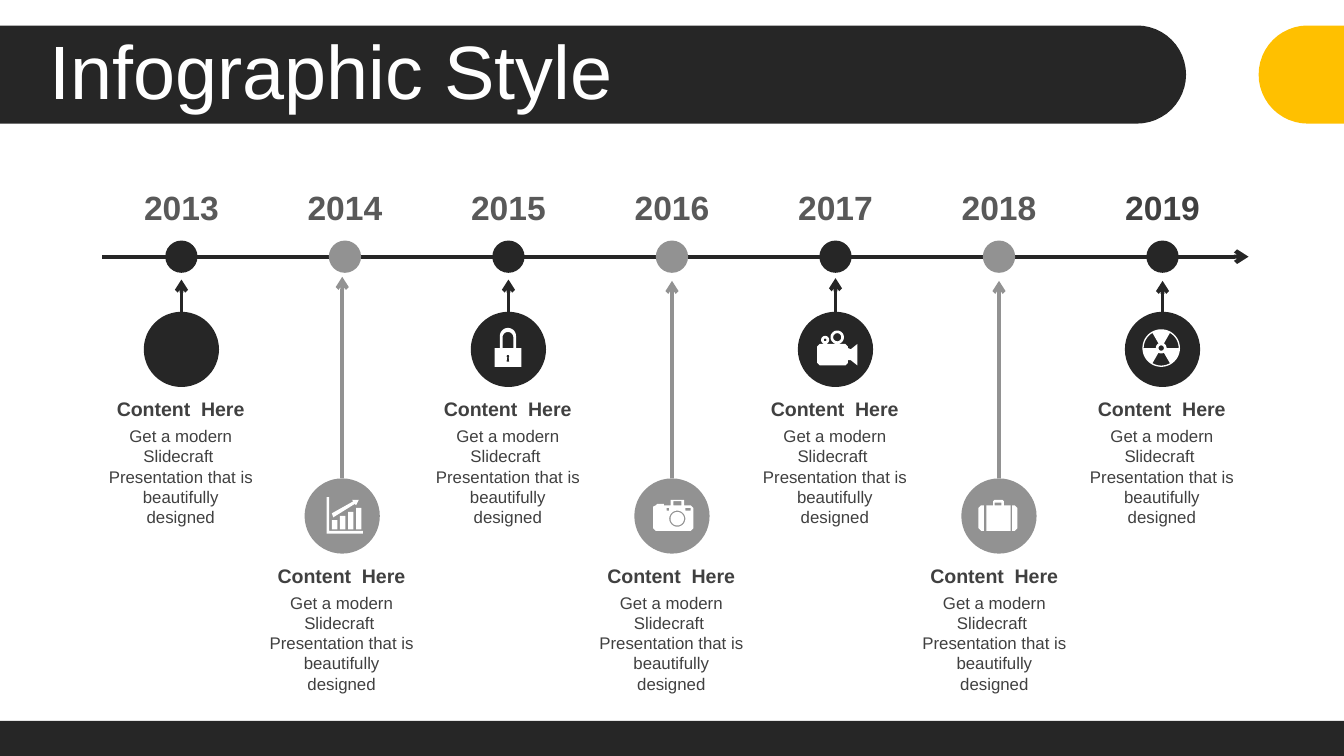
import math
from lxml import etree
from pptx import Presentation
from pptx import util as u
from pptx.dml.color import RGBColor
from pptx.enum import shapes, text
from pptx.oxml.ns import qn

DARK = RGBColor(0x26, 0x26, 0x26)
GRAY = RGBColor(0x92, 0x92, 0x92)
AMBER = RGBColor(0xFF, 0xC0, 0x00)
WHITE = RGBColor(0xFF, 0xFF, 0xFF)
INK = RGBColor(0x40, 0x40, 0x40)
YEAR = RGBColor(0x59, 0x59, 0x59)

WIDTH, HEIGHT = 10, 10 * 9 / 16
FOOTER_H = 0.26
BAND_TOP, BAND_BOTTOM = 0.19, 0.92
FIRST_X, LAST_X, AXIS_Y = 1.35, 8.65, 1.91
NODE_R, BADGE_R = 0.12, 0.28
HEADING = "Content  Here"
BODY = "Get a modern Slidecraft  Presentation that is beautifully designed"

# year, badge shift, text shift, arrow tip
MILESTONES = [
    ("2013", 0, 0, 2.08),
    ("2014", -0.02, -0.02, 2.06),
    ("2015", 0, 0, 2.08),
    ("2016", 0, 0, 2.09),
    ("2017", 0, 0, 2.07),
    ("2018", 0, -0.03, 2.09),
    ("2019", 0, 0, 2.09),
]
STEP = (LAST_X - FIRST_X) / (len(MILESTONES) - 1)


def arc(cx, cy, r, start, end, n=24):
    angles = [math.radians(start + (end - start) * i / n) for i in range(n + 1)]
    return [(cx + r * math.cos(a), cy + r * math.sin(a)) for a in angles]


def ring(cx, cy, r):
    return arc(cx, cy, r, 0, 360, 48)


def box(left, top, right, bottom):
    return [(left, top), (right, top), (right, bottom), (left, bottom)]


def paint(sp, color):
    sp.shadow.inherit = False
    sp.fill.solid()
    sp.fill.fore_color.rgb = color
    sp.line.fill.background()
    return sp


def add_outline(s, contours, color):
    contours = [[(u.Inches(x), u.Inches(y)) for x, y in c] for c in contours]
    fb = s.shapes.build_freeform(*contours[0][0], scale=1.0)
    for i, points in enumerate(contours):
        if i:
            fb.move_to(*points[0])
        fb.add_line_segments(points[1:], close=True)
    return paint(fb.convert_to_shape(), color)


def add_preset(s, kind, left, top, width, height, color):
    sp = s.shapes.add_shape(kind, u.Inches(left), u.Inches(top),
                            u.Inches(width), u.Inches(height))
    return paint(sp, color)


def add_circle(s, cx, cy, r, color):
    return add_preset(s, shapes.MSO_SHAPE.OVAL, cx - r, cy - r, 2 * r, 2 * r, color)


def add_arrow(s, x1, y1, x2, y2, color, width, start=None):
    ln = s.shapes.add_connector(shapes.MSO_CONNECTOR.STRAIGHT, u.Inches(x1),
                                u.Inches(y1), u.Inches(x2), u.Inches(y2))
    if start is not None:
        ln.begin_connect(start, 0)
    ln.line.color.rgb = color
    ln.line.width = u.Pt(width)
    spPr = ln._element.spPr
    etree.SubElement(spPr.find(qn("a:ln")), qn("a:tailEnd"), type="arrow")
    etree.SubElement(spPr, qn("a:effectLst"))


def add_text(s, left, top, width, height, words, size, color, bold=False,
             align=text.PP_ALIGN.CENTER, anchor=text.MSO_ANCHOR.MIDDLE):
    sp = s.shapes.add_textbox(u.Inches(left), u.Inches(top),
                              u.Inches(width), u.Inches(height))
    tf = sp.text_frame
    tf.word_wrap = True
    tf.vertical_anchor = anchor
    p = tf.paragraphs[0]
    p.alignment = align
    r = p.add_run()
    r.text = words
    r.font.name = "Arial"
    r.font.size = u.Pt(size)
    r.font.bold = bold
    r.font.color.rgb = color
    return p


def add_band(s, edge_x, cap_x, start, end, color):
    r = (BAND_BOTTOM - BAND_TOP) / 2
    cap = arc(cap_x, BAND_TOP + r, r, start, end)
    add_outline(s, [[(edge_x, cap[0][1])] + cap + [(edge_x, cap[-1][1])]], color)


def add_frame(s):
    add_band(s, 0, 8.46, -90, 90, DARK)
    add_preset(s, shapes.MSO_SHAPE.RECTANGLE, 0, HEIGHT - FOOTER_H, WIDTH, FOOTER_H, DARK)
    add_band(s, WIDTH, 9.73, 90, 270, AMBER)
    p = add_text(s, 0.27, 0.26, 9.49, 0.59, "Infographic Style", 40.5, WHITE,
                 align=text.PP_ALIGN.LEFT)
    p.line_spacing = 0.9
    p.space_before = u.Pt(7.5)


def add_milestone(s, i, year, badge_shift, text_shift, tip):
    x = FIRST_X + i * STEP
    color, badge_y = (GRAY, 3.84) if i % 2 else (DARK, 2.6)
    add_circle(s, x, AXIS_Y, NODE_R, color)
    badge_x = x + badge_shift
    badge = add_circle(s, badge_x, badge_y, BADGE_R, color)
    add_arrow(s, badge_x, badge_y - BADGE_R, badge_x, tip, color, 2, badge)
    last = i == len(MILESTONES) - 1
    add_text(s, x - 0.38, 1.34, 0.76, 0.4, year, 18, INK if last else YEAR, True)
    left = x + text_shift - 0.64
    add_text(s, left, badge_y + 0.3, 1.27, 0.28, HEADING, 10.5, INK, True)
    add_text(s, left, badge_y + 0.52, 1.27, 0.86, BODY, 9, INK,
             anchor=text.MSO_ANCHOR.TOP)


def chart_icon():
    bars = [box(2.47 + 0.06 * i, 3.87 - 0.03 * i, 2.51 + 0.06 * i, 3.94)
            for i in range(4)]
    trend = [(2.62, 3.72), (2.67, 3.72), (2.65, 3.76), (2.64, 3.75),
             (2.48, 3.85), (2.47, 3.82), (2.63, 3.73)]
    axes = [(2.43, 3.7), (2.45, 3.7), (2.45, 3.95), (2.7, 3.95),
            (2.7, 3.97), (2.43, 3.97)]
    return bars + [trend, axes]


def padlock_icon():
    body = ([(3.68, 2.73), (3.68, 2.59), (3.72, 2.59)]
            + arc(3.78, 2.5, 0.06, 180, 360)
            + [(3.84, 2.59), (3.88, 2.59), (3.88, 2.73)])
    gap = [(3.74, 2.59)] + arc(3.78, 2.51, 0.04, 180, 360) + [(3.82, 2.59)]
    keyhole = [(3.77, 2.69)] + arc(3.78, 2.65, 0.01, 130, 410) + [(3.79, 2.69)]
    return [body, gap, keyhole]


def camera_icon():
    body = [(4.86, 3.77), (4.88, 3.76), (4.89, 3.75), (4.94, 3.75), (4.94, 3.76),
            (4.99, 3.76), (4.99, 3.72), (5.09, 3.72), (5.09, 3.76), (5.14, 3.76),
            (5.16, 3.78), (5.16, 3.93), (5.14, 3.95), (4.88, 3.95), (4.86, 3.93)]
    return [body, box(5.01, 3.73, 5.07, 3.76), box(4.96, 3.78, 4.98, 3.8),
            box(5.1, 3.78, 5.14, 3.8), ring(5.04, 3.86, 0.06), ring(5.04, 3.86, 0.05)]


def film_icon():
    body = [(6.08, 2.58), (6.1, 2.56), (6.29, 2.56), (6.31, 2.58), (6.31, 2.59),
            (6.33, 2.6), (6.38, 2.56), (6.38, 2.72), (6.33, 2.68), (6.31, 2.68),
            (6.31, 2.7), (6.29, 2.72), (6.1, 2.72), (6.08, 2.7)]
    return [body, ring(6.23, 2.51, 0.05), ring(6.23, 2.51, 0.03),
            ring(6.14, 2.53, 0.03), ring(6.14, 2.53, 0.01)]


def suitcase_icon():
    middle = [(7.34, 3.76), (7.39, 3.76), (7.39, 3.73), (7.4, 3.72), (7.46, 3.72),
              (7.47, 3.73), (7.47, 3.76), (7.52, 3.76), (7.52, 3.95), (7.34, 3.95)]
    left = [(7.32, 3.76), (7.32, 3.95), (7.3, 3.95), (7.28, 3.93), (7.28, 3.78), (7.3, 3.76)]
    right = [(14.85 - x, y) for x, y in left]
    return [middle, left, right, box(7.4, 3.74, 7.45, 3.76)]


def radiation_icon():
    cx, cy = 8.64, 2.59
    blades = [arc(cx, cy, 0.13, a, a + 60) + arc(cx, cy, 0.04, a + 60, a)
              for a in (60, 180, 300)]
    return [ring(cx, cy, 0.14), ring(cx, cy, 0.02)] + blades


def main():
    prs = Presentation()
    prs.slide_width, prs.slide_height = u.Inches(WIDTH), u.Inches(HEIGHT)
    s = prs.slides.add_slide(prs.slide_layouts[6])
    add_frame(s)
    add_arrow(s, 0.76, AXIS_Y, 9.29, AXIS_Y, DARK, 2.25)
    for i, milestone in enumerate(MILESTONES):
        add_milestone(s, i, *milestone)
    for icon in (chart_icon, padlock_icon, camera_icon, film_icon,
                 suitcase_icon, radiation_icon):
        add_outline(s, icon(), WHITE)
    prs.save("out.pptx")


if __name__ == "__main__":
    main()
